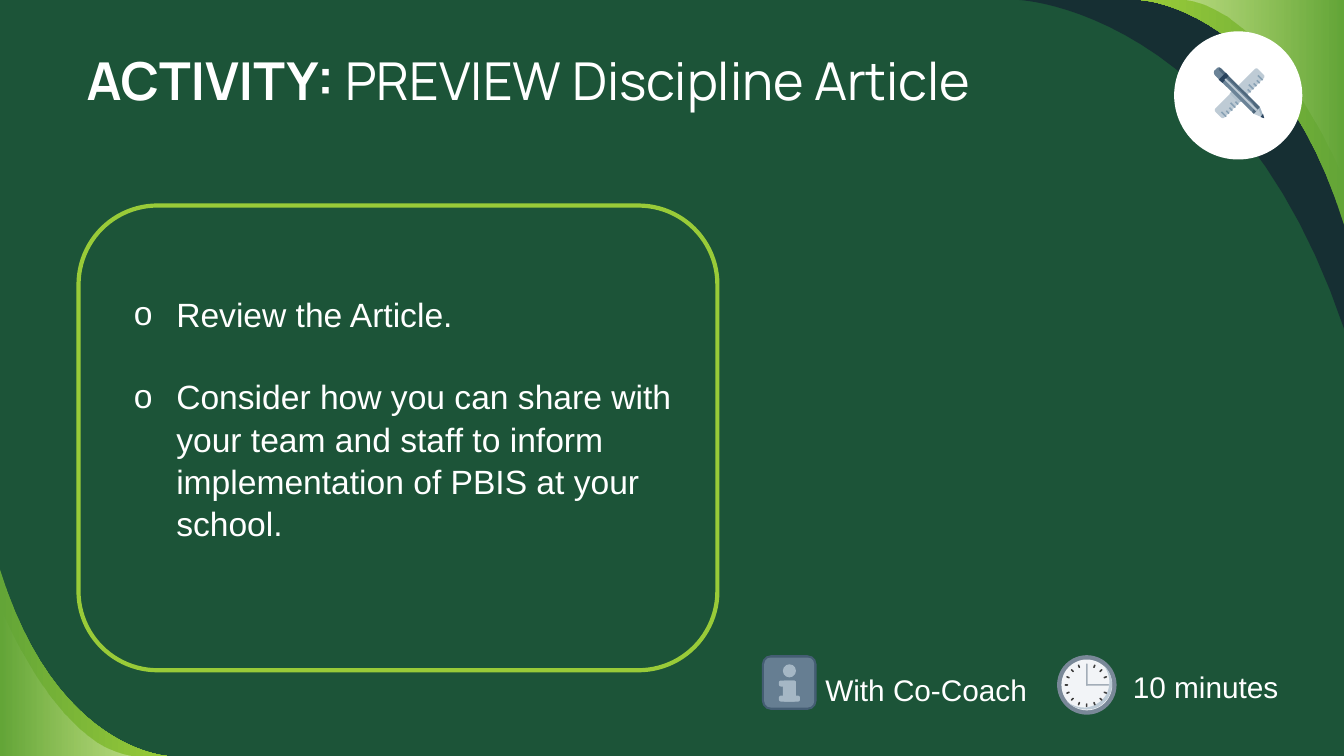
import math
from dataclasses import dataclass

from lxml import etree
from pptx import Presentation
from pptx.dml.color import RGBColor
from pptx.enum.shapes import MSO_SHAPE
from pptx.enum.text import MSO_ANCHOR, MSO_AUTO_SIZE, PP_ALIGN
from pptx.oxml.ns import qn
from pptx.util import Cm, Pt

ELLIPSE, RECTANGLE, ROUNDED = MSO_SHAPE.OVAL, MSO_SHAPE.RECTANGLE, MSO_SHAPE.ROUNDED_RECTANGLE
MIDDLE, LEFT, NO_FIT = MSO_ANCHOR.MIDDLE, PP_ALIGN.LEFT, MSO_AUTO_SIZE.NONE
TITLE_ONLY = 5
SLIDE_WIDTH, SLIDE_HEIGHT = 33.87, 19.05


@dataclass(frozen=True)
class Theme:
    background: str = "1C5438"
    white: str = "FFFFFF"
    leaf: str = "63A537"
    lime: str = "99CB38"
    night: str = "12102F"
    heading_font: str = "Manrope"
    body_font: str = "Arial"
    title_size: float = 37.3
    body_size: float = 24
    label_size: float = 21.3
    clock_rim: str = "798898"
    clock_face: str = "F2F4F7"
    clock_shade: str = "BCCAD6"
    clock_hand: str = "A3ADB8"
    clock_mark: str = "3D3D3D"
    info_rim: str = "445D73"
    info_face: str = "667E92"
    info_letter: str = "A5B7C5"
    ruler: str = "BECBD5"
    ruler_mark: str = "88A1B4"
    ruler_shade: str = "B2C2CE"
    pencil: str = "6B8397"
    pencil_side: str = "4E677C"
    pencil_lead: str = "29435D"
    tip_shade: str = "9FB3C2"


THEME = Theme()


def color(value):
    return RGBColor.from_string(value)


def set_alpha(color_element, percent):
    etree.SubElement(color_element, qn("a:alpha")).set("val", str(percent * 1000))


def paint(shape, fill):
    shape.fill.solid()
    shape.fill.fore_color.rgb = color(fill)
    shape.line.fill.background()
    shape.shadow.inherit = False


def paint_gradient(shape, stops):
    shape.fill.gradient()
    shape.fill.gradient_angle = 0
    for stop, (value, alpha) in zip(shape.fill.gradient_stops, stops):
        stop.color.rgb = color(value)
    elements = shape.fill._xPr.iter(qn("a:srgbClr"))
    for element, (value, alpha) in zip(list(elements), stops):
        set_alpha(element, alpha)


def add_preset(shapes, kind, box, fill, rotation=0, corner=None):
    shape = shapes.add_shape(kind, *map(Cm, box))
    paint(shape, fill)
    shape.rotation = rotation
    if corner is not None:
        shape.adjustments[0] = corner
    return shape


def curve_points(start, segments, steps=24):
    points = [start]
    for segment in segments:
        if len(segment) == 2:
            points.append(segment)
            continue
        controls = [points[-1], segment[0:2], segment[2:4], segment[4:6]]
        for step in range(1, steps + 1):
            t = step / steps
            weights = [math.comb(3, i) * t**i * (1 - t) ** (3 - i) for i in range(4)]
            points.append(tuple(sum(w * c[axis] for w, c in zip(weights, controls)) for axis in (0, 1)))
    return points


def add_outline(shapes, origin, start, segments, fill):
    points = [(Cm(origin[0] + x), Cm(origin[1] + y)) for x, y in curve_points(start, segments)]
    builder = shapes.build_freeform(*points[0], scale=1.0)
    builder.add_line_segments(points[1:], close=True)
    shape = builder.convert_to_shape()
    paint(shape, fill)
    return shape


def set_font(font, name, size, bold=False):
    for key, value in {"name": name, "size": Pt(size), "bold": bold}.items():
        setattr(font, key, value)
    font.color.rgb = color(THEME.white)


def format_frame(frame, **values):
    for key, value in {"word_wrap": True, "auto_size": NO_FIT, "vertical_anchor": MIDDLE, **values}.items():
        setattr(frame, key, value)


def add_swoosh(shapes, box, rotation, highlight=False):
    left, top, width, height = box
    if highlight:
        start, segments = (0, 0), [(0, 0, 0.42 * width, 0.94 * height, width, height), (0, height)]
    else:
        start, segments = (width, height), [(width, height, 0.33 * width, 0.97 * height, 0, 0), (0, height)]
    shape = add_outline(shapes, (left, top), start, segments, THEME.night)
    shape.rotation = rotation
    return shape


def add_corner(slide, sizes, rotation, shadow_size=None):
    shapes = slide.shapes.add_group_shape().shapes

    def place(size):
        width, height = size
        if rotation:
            return SLIDE_WIDTH - width, 0, width, height
        return 0, SLIDE_HEIGHT - height, width, height

    if shadow_size:
        shadow = add_swoosh(shapes, place(shadow_size), rotation)
        set_alpha(shadow.fill._xPr.find(".//" + qn("a:srgbClr")), 54)
    green, highlight = sizes
    paint_gradient(add_swoosh(shapes, place(green), rotation), [(THEME.leaf, 100), (THEME.lime, 100)])
    paint_gradient(add_swoosh(shapes, place(highlight), rotation, True), [(THEME.white, 0), (THEME.white, 36)])


def add_title(slide, box):
    title = slide.shapes.title
    title.left, title.top, title.width, title.height = map(Cm, box)
    margins = dict.fromkeys(["margin_left", "margin_top", "margin_right", "margin_bottom"], Cm(0.25))
    format_frame(title.text_frame, **margins)
    paragraph = title.text_frame.paragraphs[0]
    paragraph.alignment = LEFT
    paragraph.line_spacing = 0.9
    for text, bold in [("ACTIVITY: ", True), ("PREVIEW Discipline Article", False)]:
        run = paragraph.add_run()
        run.text = text
        set_font(run.font, THEME.heading_font, THEME.title_size, bold)


def add_task_card(slide, box, tasks):
    card = add_preset(slide.shapes, ROUNDED, box, THEME.background, corner=0.17)
    card.fill.background()
    card.line.color.rgb = color(THEME.lime)
    card.line.width = Pt(3)
    frame = card.text_frame
    format_frame(frame, margin_bottom=Cm(1.15))
    for index, task in enumerate(tasks):
        paragraph = frame.paragraphs[0] if index == 0 else frame.add_paragraph()
        paragraph.text = task
        paragraph.alignment = LEFT
        paragraph.line_spacing = 1.05
        if index:
            paragraph.space_before = Pt(29)
        properties = paragraph._p.get_or_add_pPr()
        properties.set("marL", str(Cm(1.63)))
        properties.set("indent", str(Cm(-1.07)))
        bullet_color = etree.SubElement(properties, qn("a:buClr"))
        etree.SubElement(bullet_color, qn("a:srgbClr")).set("val", THEME.white)
        etree.SubElement(properties, qn("a:buFont")).set("typeface", THEME.body_font)
        etree.SubElement(properties, qn("a:buChar")).set("char", "o")
        set_font(paragraph.font, THEME.body_font, THEME.body_size)


def add_label(slide, box, text, inset):
    frame = slide.shapes.add_textbox(*map(Cm, box)).text_frame
    format_frame(frame, margin_left=Cm(inset), margin_right=Cm(0.33))
    frame.text = text
    set_font(frame.paragraphs[0].font, THEME.body_font, THEME.label_size)


def add_clock(slide, left, top, size):
    shapes = slide.shapes.add_group_shape().shapes
    middle_x, middle_y = left + size / 2, top + size / 2
    for diameter, fill in [(size, THEME.clock_rim), (1.28, THEME.clock_face)]:
        add_preset(shapes, ELLIPSE, (middle_x - diameter / 2, middle_y - diameter / 2, diameter, diameter), fill)
    for box in [(-0.02, -0.54, 0.04, 0.56), (-0.02, -0.02, 0.58, 0.04)]:
        hand = (middle_x + box[0], middle_y + box[1], *box[2:])
        add_preset(shapes, ROUNDED, hand, THEME.clock_hand, corner=0.5)
    shade = [(1.37, 0.51, 1.37, 0.89, 1.14, 1.12), (1.02, 1.24, 0.84, 1.32, 0.69, 1.32),
             (0.53, 1.32, 0.38, 1.27, 0.25, 1.17), (0.38, 1.3, 0.56, 1.37, 0.74, 1.37),
             (0.91, 1.37, 1.07, 1.32, 1.19, 1.19), (1.45, 0.94, 1.45, 0.51, 1.17, 0.25)]
    add_outline(shapes, (left, top), (1.17, 0.25), shade, THEME.clock_shade)
    for mark in range(1, 16):
        if mark == 12:
            continue
        angle = mark * 22.5
        x = middle_x + 0.51 * math.cos(math.radians(angle))
        y = middle_y + 0.51 * math.sin(math.radians(angle))
        add_preset(shapes, ROUNDED, (x - 0.05, y - 0.02, 0.09, 0.04), THEME.clock_mark, angle, 0.5)


def add_info(slide, left, top, size):
    shapes = slide.shapes.add_group_shape().shapes
    parts = [(ROUNDED, (0, 0, size, size), THEME.info_rim, 0.17),
             (ROUNDED, (0.06, 0.06, size - 0.12, size - 0.12), THEME.info_face, 0.13),
             (ELLIPSE, (0.53, 0.23, 0.33, 0.33), THEME.info_letter, None)]
    letter = [(0.43, 0.64, 0.43, 0.15), (0.53, 0.64, 0.33, 0.53), (0.43, 1.02, 0.53, 0.15)]
    parts += [(ROUNDED, box, THEME.info_letter, 0.05 / min(box[2:])) for box in letter]
    for kind, (x, y, width, height), fill, corner in parts:
        add_preset(shapes, kind, (left + x, top + y, width, height), fill, corner=corner)


def add_tools_badge(slide, left, top, size):
    shapes = slide.shapes.add_group_shape().shapes
    add_preset(shapes, ELLIPSE, (left, top, size, size), THEME.white)
    add_preset(shapes, ROUNDED, (left + 0.89, top + 1.4, 1.52, 0.32), THEME.ruler, -45, 0.17)
    for mark in range(13):
        length = 0.1 if mark % 3 else 0.17
        shift = 0.92 * mark / 12
        x = left + 1.31 + shift - length * math.sqrt(0.5) / 2
        y = top + 2.15 - shift - length * math.sqrt(0.5) / 2
        add_preset(shapes, RECTANGLE, (x - length / 2, y - 0.02, length, 0.04), THEME.ruler_mark, 45)
    outlines = [
        (THEME.ruler_shade, (1.55, 1.4), [(1.4, 1.57), (1.63, 1.8), (1.8, 1.65)]),
        (THEME.pencil, (1.12, 0.91), [(1.09, 0.91, 1.07, 0.94, 1.04, 0.97), (0.99, 0.99, 0.99, 1.07, 1.04, 1.12),
                                      (2.01, 2.08), (2.16, 1.91), (1.22, 0.97), (1.19, 0.94, 1.17, 0.91, 1.12, 0.91)]),
        (THEME.ruler, (2.16, 1.91), [(2.01, 2.08), (2.27, 2.19)]),
        (THEME.tip_shade, (2.16, 1.91), [(2.13, 1.96), (2.21, 2.16), (2.27, 2.19)]),
        (THEME.pencil_side, (1.14, 0.91), [(1.12, 0.97), (1.96, 1.78), (2.03, 1.85, 2.03, 1.98, 1.96, 2.03),
                                           (2.01, 2.08), (2.16, 1.91), (1.22, 0.97)]),
        (THEME.pencil_lead, (2.24, 2.08), [(2.18, 2.16), (2.27, 2.19)]),
        (THEME.pencil_lead, (1.3, 1.04), [(1.12, 1.22), (1.22, 1.3), (1.37, 1.12)]),
        (THEME.ruler, (1.3, 1.19), [(1.27, 1.22), (2.06, 2.01), (2.11, 1.98)]),
    ]
    for fill, start, segments in outlines:
        add_outline(shapes, (left, top), start, segments, fill)


def build_activity_slide(presentation):
    slide = presentation.slides.add_slide(presentation.slide_layouts[TITLE_ONLY])
    slide.background.fill.solid()
    slide.background.fill.fore_color.rgb = color(THEME.background)
    add_corner(slide, [(4.22, 4.7), (3.35, 3.78)], 0)
    add_corner(slide, [(5.11, 5.66), (4.06, 4.57)], 180, (8.18, 8.28))
    add_title(slide, (1.93, 0.94, 26.06, 2.34))
    add_task_card(slide, (1.98, 5.18, 16.1, 11.71), [
        "Review the Article.",
        "Consider how you can share with your team and staff to inform implementation of PBIS at your school.",
    ])
    add_clock(slide, 26.64, 16.51, 1.5)
    add_info(slide, 19.2, 16.51, 1.38)
    add_label(slide, (19.91, 16.56, 6.73, 1.65), "With Co-Coach", 0.89)
    add_label(slide, (27.53, 16.56, 5.28, 1.47), "10 minutes", 1.02)
    add_tools_badge(slide, 29.59, 0.79, 3.23)


def main():
    presentation = Presentation()
    presentation.slide_width, presentation.slide_height = Cm(SLIDE_WIDTH), Cm(SLIDE_HEIGHT)
    build_activity_slide(presentation)
    presentation.save("out.pptx")


if __name__ == "__main__":
    main()
